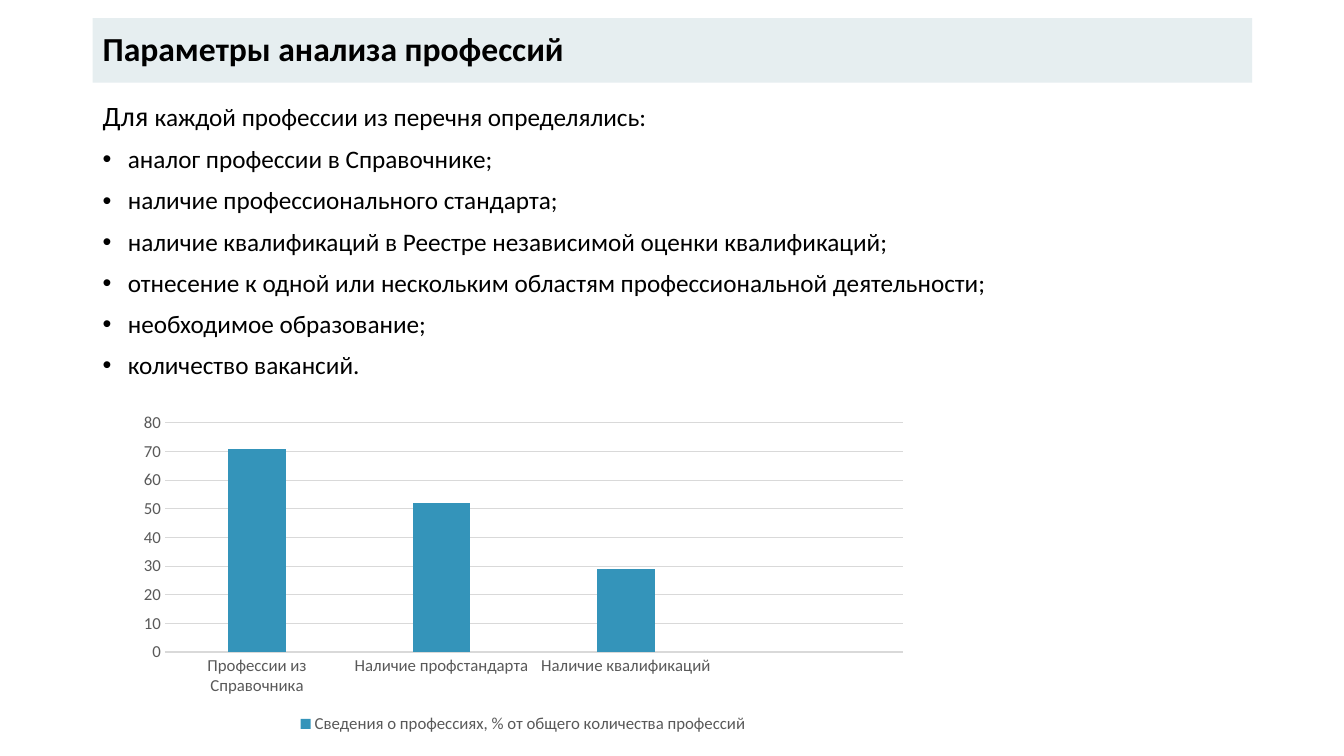
from lxml import etree
from pptx import Presentation
from pptx.chart.data import CategoryChartData
from pptx.dml.color import RGBColor
from pptx.enum.chart import XL_CHART_TYPE, XL_LEGEND_POSITION, XL_TICK_MARK
from pptx.enum.shapes import MSO_SHAPE
from pptx.enum.text import MSO_ANCHOR, PP_ALIGN
from pptx.oxml.ns import qn
from pptx.util import Inches, Pt

RECTANGLE = MSO_SHAPE.RECTANGLE
MIDDLE, TOP = MSO_ANCHOR.MIDDLE, MSO_ANCHOR.TOP
LEFT = PP_ALIGN.LEFT
COLUMNS = XL_CHART_TYPE.COLUMN_CLUSTERED
BOTTOM = XL_LEGEND_POSITION.BOTTOM
NO_TICK = XL_TICK_MARK.NONE

THEME = {
    "font": "Calibri",
    "text": RGBColor.from_string("000000"),
    "band": RGBColor.from_string("E6EEF0"),
    "bar": RGBColor.from_string("3494BA"),
    "label": RGBColor.from_string("595959"),
    "grid": RGBColor.from_string("D9D9D9"),
    "title_size": Pt(24),
    "lead_size": Pt(20),
    "body_size": Pt(18),
    "label_size": Pt(12),
    "grid_width": Pt(0.75),
}


def style_font(font, size, color, bold=False):
    font.name = THEME["font"]
    font.size = THEME[size]
    font.color.rgb = THEME[color]
    font.bold = bold


def add_run(paragraph, text, size, bold=False):
    run = paragraph.add_run()
    run.text = text
    style_font(run.font, size, "text", bold)


presentation = Presentation()
presentation.slide_width = Inches(13.33)
presentation.slide_height = Inches(7.5)
slide = presentation.slides.add_slide(presentation.slide_layouts[6])

heading = slide.shapes.add_shape(
    RECTANGLE, Inches(0.92), Inches(0.18), Inches(11.5), Inches(0.64)
)
heading.shadow.inherit = False
heading.fill.solid()
heading.fill.fore_color.rgb = THEME["band"]
heading.line.fill.background()
heading.text_frame.word_wrap = True
heading.text_frame.vertical_anchor = MIDDLE
heading_line = heading.text_frame.paragraphs[0]
heading_line.alignment = LEFT
heading_line.line_spacing = 0.9
add_run(heading_line, "Параметры анализа профессий", "title_size", True)

parameters = slide.shapes.add_textbox(
    Inches(0.92), Inches(0.97), Inches(11.5), Inches(6.36)
).text_frame
parameters.word_wrap = True
parameters.vertical_anchor = TOP
lead = parameters.paragraphs[0]
add_run(lead, "Для ", "lead_size")
add_run(lead, "каждой профессии из перечня определялись:", "body_size")

for parameter in (
    "аналог профессии в Справочнике;",
    "наличие профессионального стандарта;",
    "наличие квалификаций в Реестре независимой оценки квалификаций;",
    "отнесение к одной или нескольким областям профессиональной деятельности;",
    "необходимое образование;",
    "количество вакансий.",
):
    item = parameters.add_paragraph()
    add_run(item, parameter, "body_size")
    properties = item._p.get_or_add_pPr()
    properties.set("marL", str(Inches(0.25)))
    properties.set("indent", str(-Inches(0.25)))
    etree.SubElement(properties, qn("a:buFont")).set("typeface", "Arial")
    etree.SubElement(properties, qn("a:buChar")).set("char", "•")

for paragraph in parameters.paragraphs:
    paragraph.line_spacing = 0.9
    paragraph.space_before = Pt(10)

shares = CategoryChartData()
shares.categories = [
    "Профессии из Справочника",
    "Наличие профстандарта",
    "Наличие квалификаций",
    "",
]
shares.add_series(
    "Сведения о профессиях, % от общего количества профессий", (71, 52, 29, None)
)
chart = slide.shapes.add_chart(
    COLUMNS, Inches(1.27), Inches(4.03), Inches(7.84), Inches(3.29), shares
).chart
style_font(chart.font, "label_size", "label")
chart.has_title = False
chart.has_legend = True
chart.legend.position = BOTTOM
chart.legend.include_in_layout = False
style_font(chart.legend.font, "label_size", "label")

columns = chart.plots[0]
columns.gap_width = 219
columns.overlap = -27
columns.vary_by_categories = False
columns.series[0].format.fill.solid()
columns.series[0].format.fill.fore_color.rgb = THEME["bar"]

categories, values = chart.category_axis, chart.value_axis
for axis in (categories, values):
    axis.major_tick_mark = NO_TICK
    axis.minor_tick_mark = NO_TICK
    style_font(axis.tick_labels.font, "label_size", "label")
values.minimum_scale = 0
values.maximum_scale = 80
values.major_unit = 10
values.has_major_gridlines = True
values.format.line.fill.background()
for line in (categories.format.line, values.major_gridlines.format.line):
    line.color.rgb = THEME["grid"]
    line.width = THEME["grid_width"]

presentation.save("out.pptx")
